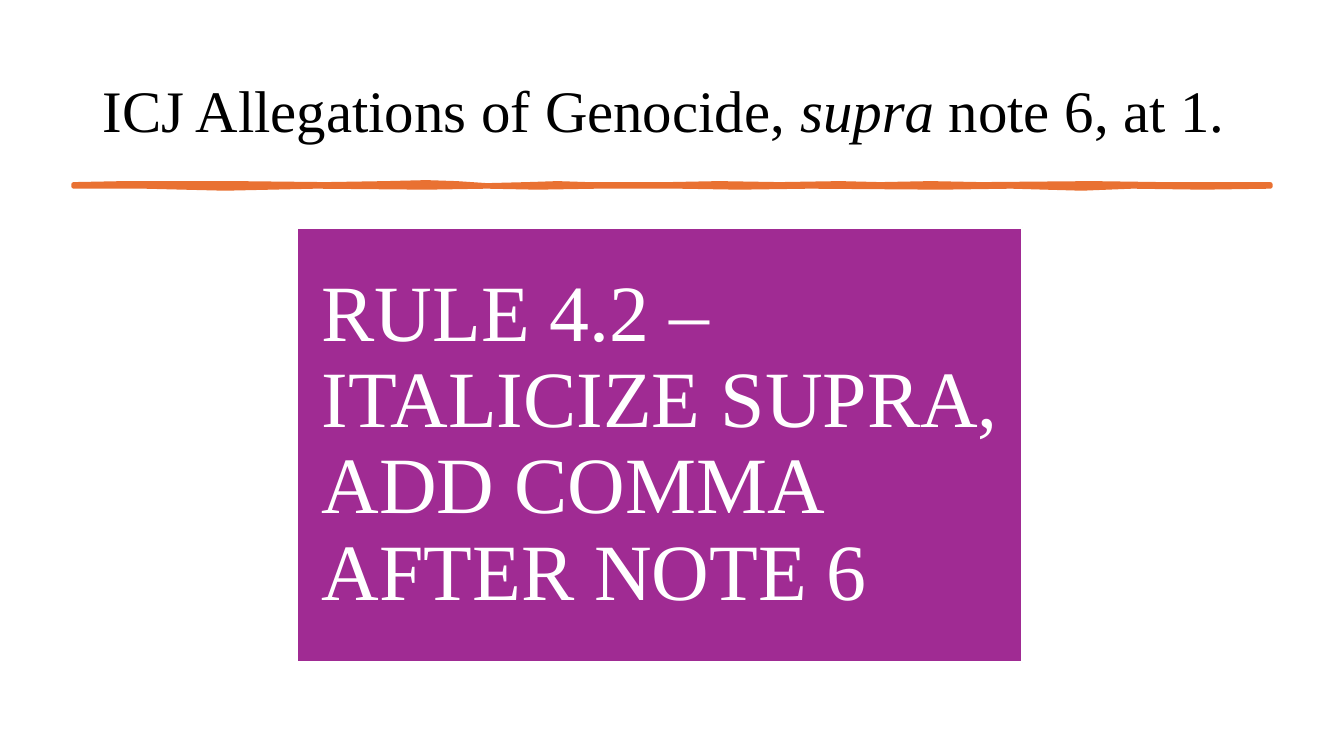
from dataclasses import dataclass

from pptx import Presentation
from pptx.dml.color import RGBColor as RGB
from pptx.enum.shapes import MSO_SHAPE as Shape
from pptx.enum.text import MSO_ANCHOR as Anchor, PP_ALIGN as Align
from pptx.util import Inches, Pt


@dataclass(frozen=True)
class Theme:
    font: str = "Times New Roman"
    ink: RGB = RGB(0x00, 0x00, 0x00)
    paper: RGB = RGB(0xFF, 0xFF, 0xFF)
    accent: RGB = RGB(0xE9, 0x71, 0x32)
    panel: RGB = RGB(0xA0, 0x2B, 0x93)
    title_size: Pt = Pt(42)
    rule_size: Pt = Pt(57)


THEME = Theme()

# Hand-drawn stroke: (distance from left, offset from top) along each edge
STROKE_TOP = [(0, 0), (0.5, -0.01), (1.6, -0.01), (2.5, 0), (3.1, -0.01),
              (3.5, -0.02), (3.8, -0.01), (4.1, 0.01), (4.5, 0), (4.8, -0.01),
              (5.1, 0), (5.9, 0), (6.4, -0.01), (7, 0), (7.6, -0.01),
              (8, 0), (8.5, -0.01), (9, 0), (10.1, -0.01), (10.8, 0), (11.87, 0)]
STROKE_BOTTOM = [(11.87, 0.02), (11.2, 0.03), (10.5, 0.02), (10, 0.04),
                 (9.3, 0.02), (8.6, 0.03), (7.3, 0.02), (6.6, 0.03),
                 (6, 0.02), (5.2, 0.02), (4.6, 0.03), (4.1, 0.02), (3.5, 0.03),
                 (2.4, 0.02), (1.5, 0.04), (0.7, 0.02), (0, 0.02)]


def write_text(frame, runs, size, color, inset_x, inset_y):
    """Fill a frame with one left-aligned paragraph of (text, italic) runs."""
    frame.word_wrap = True
    frame.vertical_anchor = Anchor.MIDDLE
    frame.margin_left = frame.margin_right = Inches(inset_x)
    frame.margin_top = frame.margin_bottom = Inches(inset_y)
    paragraph = frame.paragraphs[0]
    paragraph.alignment = Align.LEFT
    paragraph.line_spacing = 0.9
    paragraph.font.name = THEME.font
    paragraph.font.size = size
    paragraph.font.color.rgb = color
    for text, italic in runs:
        run = paragraph.add_run()
        run.text = text
        if italic:
            run.font.italic = True


def paint(shape, fill, line, width):
    shape.shadow.inherit = False
    shape.fill.solid()
    shape.fill.fore_color.rgb = fill
    shape.line.color.rgb = line
    shape.line.width = Pt(width)


def add_citation(slide, left, top, width, height):
    citation = slide.shapes.add_textbox(
        Inches(left), Inches(top), Inches(width), Inches(height))
    runs = [("ICJ Allegations of Genocide, ", False), ("supra", True),
            (" note 6, at 1.", False)]
    write_text(citation.text_frame, runs, THEME.title_size, THEME.ink, 0.1, 0.05)


def add_stroke(slide, left, top):
    outline = [(Inches(left + x), Inches(top + y))
               for x, y in STROKE_TOP + STROKE_BOTTOM]
    builder = slide.shapes.build_freeform(*outline[0])
    builder.add_line_segments(outline[1:], close=True)
    paint(builder.convert_to_shape(), THEME.accent, THEME.accent, 3.25)


def add_rule_panel(slide, left, top, width, height):
    panel = slide.shapes.add_shape(
        Shape.RECTANGLE, Inches(left), Inches(top), Inches(width), Inches(height))
    paint(panel, THEME.panel, THEME.paper, 1.5)
    rule = "RULE 4.2 – ITALICIZE SUPRA, ADD COMMA AFTER NOTE 6"
    write_text(panel.text_frame, [(rule, False)], THEME.rule_size, THEME.paper,
               0.24, 0.24)


def main():
    deck = Presentation()
    deck.slide_width, deck.slide_height = Inches(13.33), Inches(7.5)
    slide = deck.slides.add_slide(deck.slide_layouts[6])
    slide.background.fill.solid()
    slide.background.fill.fore_color.rgb = THEME.paper

    # Citation, underline stroke, and the rule that applies
    add_citation(slide, 0.92, 0.4, 11.5, 1.45)
    add_stroke(slide, 0.73, 1.83)
    add_rule_panel(slide, 2.95, 2.26, 7.19, 4.31)
    deck.save("out.pptx")


if __name__ == "__main__":
    main()
